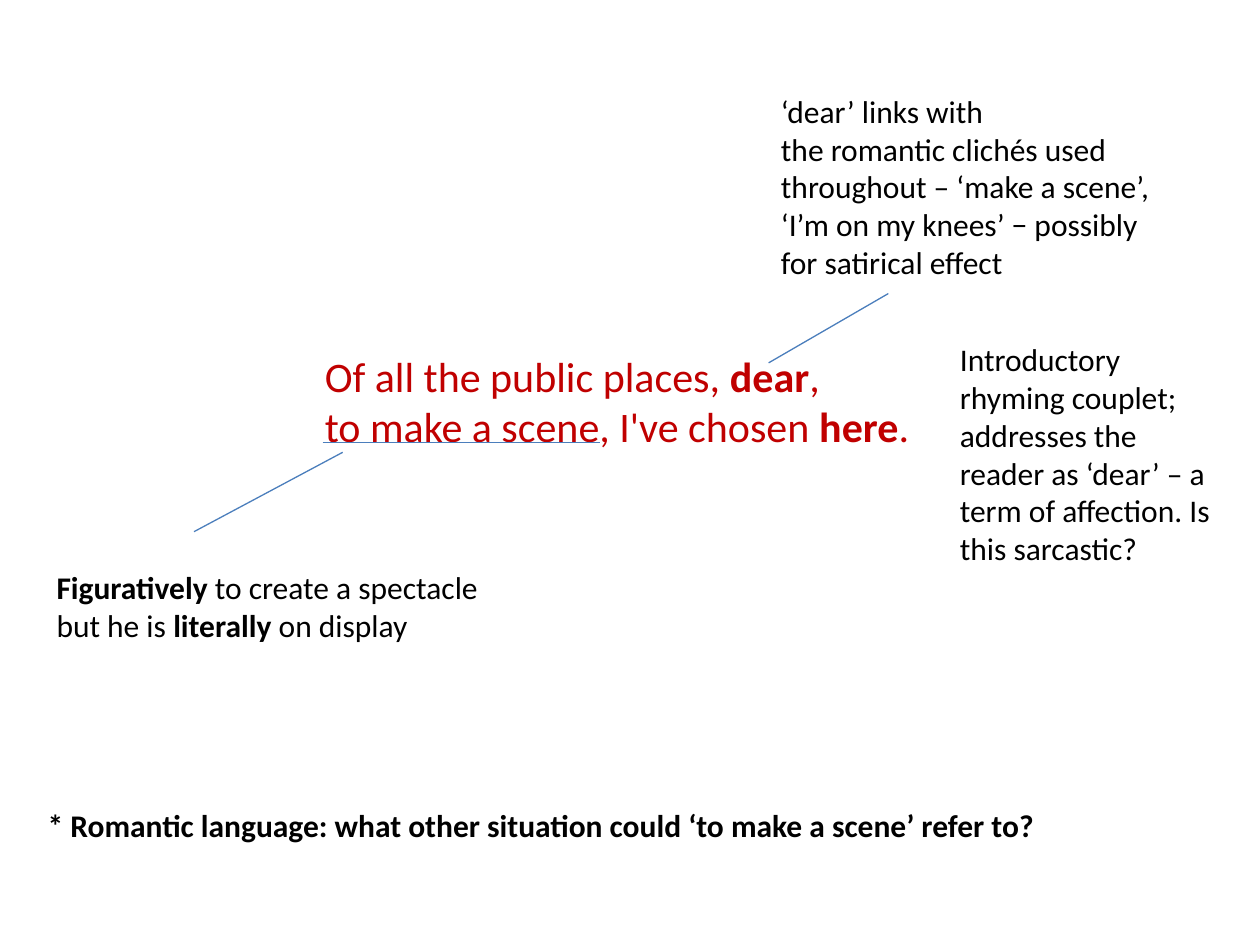
"""Build a slide of annotations around a quoted rhyming couplet."""
from lxml import etree
from pptx import Presentation
from pptx.dml.color import RGBColor
from pptx.enum import shapes, text
from pptx.oxml.ns import qn
from pptx.util import Inches, Pt

HUES = {"quote": "C00000", "note": "000000", "line": "4B7EBC"}
SIZES = {"quote": 24, "note": 18}

BOXES = [
    ("quote", (2.48, 2.73, 4.87, 0.91), False, [
        [("Of all the public places, ", False), ("dear", True), (",", False),
         ("\n", False), ("to make a scene, I've chosen ", False),
         ("here", True), (".", False)]]),
    ("note", (0.35, 4.46, 3.55, 0.71), False, [
        [("Figuratively", True), (" to create a spectacle", False)],
        [("but he is ", False), ("literally", True), (" on display", False)]]),
    ("note", (7.52, 2.65, 2.2, 1.92), True, [
        [("Introductory rhyming couplet; addresses the reader as ‘dear’ – "
          "a term of affection. Is this sarcastic?", False)]]),
    ("note", (0.28, 6.35, 8.2, 0.4), False, [
        [("* Romantic language: what other situation could "
          "‘to make a scene’ refer to?", True)]]),
    ("note", (6.1, 0.68, 3.23, 1.62), True, [
        [("‘dear’ links with", False)],
        [("the romantic clichés used", False)],
        [("throughout – ‘make a scene’,", False)],
        [("‘I’m on my knees’ − possibly", False)],
        [("for satirical effect", False)]]),
]

LINES = [
    (2.56, 3.51, 4.76, 3.51),
    (2.72, 3.59, 1.54, 4.22),
    (6.1, 2.88, 7.05, 2.33),
]


def add_box(slide, role, place, wrap, paras):
    frame = slide.shapes.add_textbox(*map(Inches, place)).text_frame
    frame.word_wrap = wrap
    frame.auto_size = text.MSO_AUTO_SIZE.SHAPE_TO_FIT_TEXT
    for i, runs in enumerate(paras):
        para = frame.add_paragraph() if i else frame.paragraphs[0]
        for words, bold in runs:
            if words == "\n":
                para.add_line_break()
                continue
            run = para.add_run()
            run.text = words
            font = run.font
            font.name = "Calibri"
            font.size = Pt(SIZES[role])
            font.bold = bold
            font.color.rgb = RGBColor.from_string(HUES[role])


def add_line(slide, ends):
    link = slide.shapes.add_connector(
        shapes.MSO_CONNECTOR.STRAIGHT, *map(Inches, ends))
    link.line.width = Pt(0.75)
    link.line.color.rgb = RGBColor.from_string(HUES["line"])
    etree.SubElement(link._element.spPr, qn("a:effectLst"))


def main():
    deck = Presentation()
    deck.slide_width, deck.slide_height = Inches(10), Inches(7.5)
    slide = deck.slides.add_slide(deck.slide_layouts[6])
    for box in BOXES:
        add_box(slide, *box)
    for ends in LINES:
        add_line(slide, ends)
    deck.save("out.pptx")


if __name__ == "__main__":
    main()
